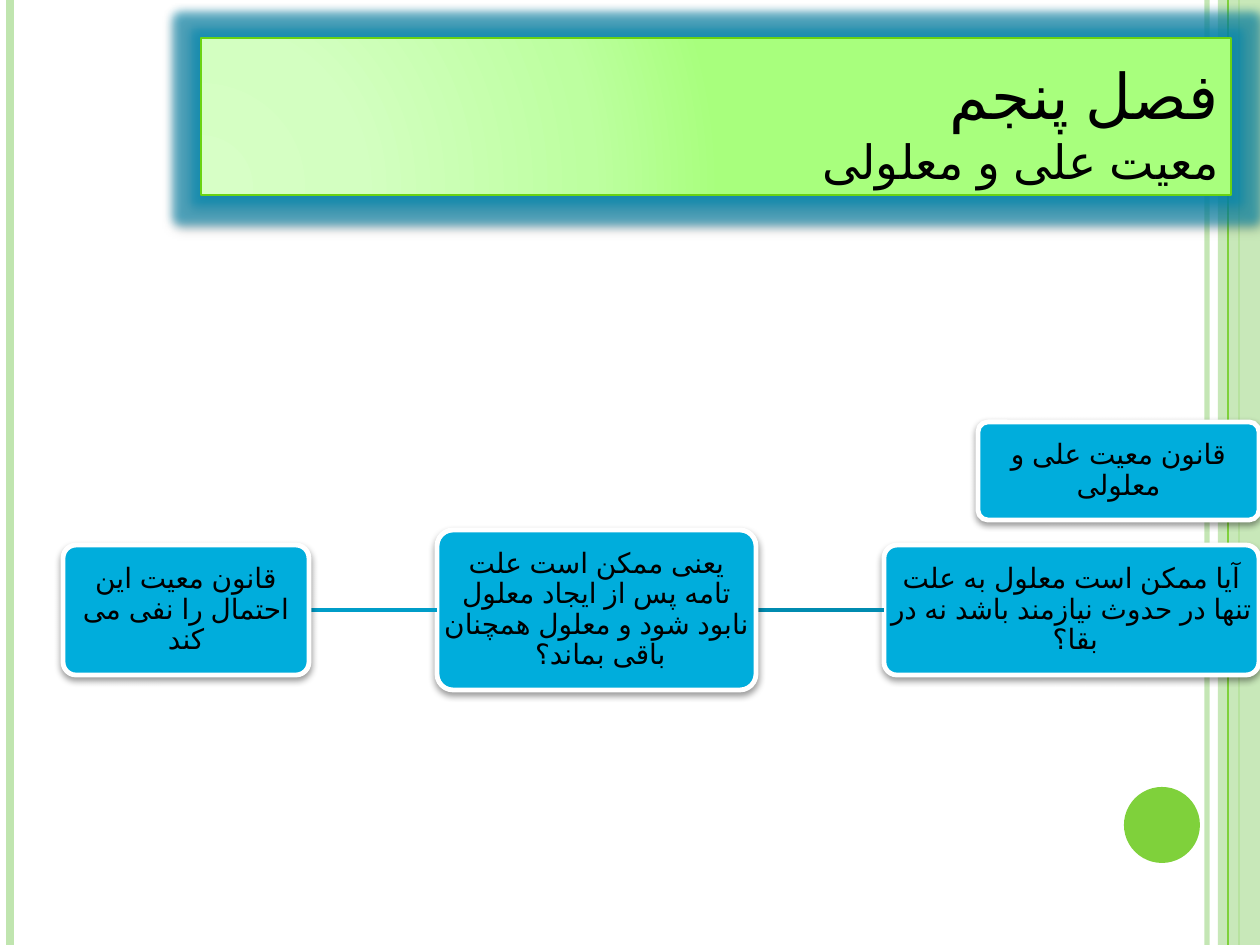
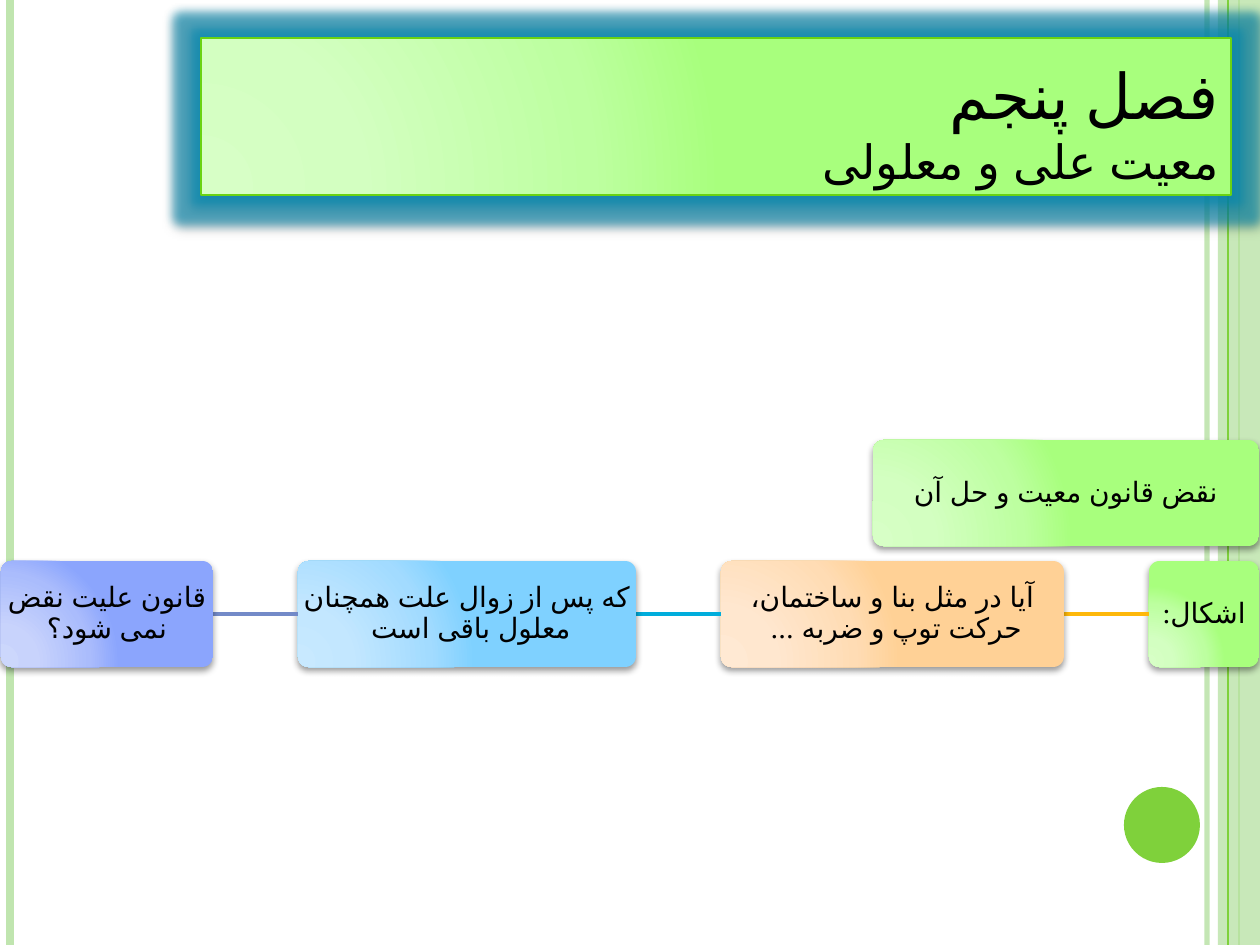
import pptx
import pptx.dml.color
import pptx.enum.shapes
import pptx.enum.text
import pptx.oxml
import pptx.oxml.ns
import pptx.util

RGBColor = pptx.dml.color.RGBColor
MSO_SHAPE = pptx.enum.shapes.MSO_SHAPE
PP_ALIGN = pptx.enum.text.PP_ALIGN
MSO_ANCHOR = pptx.enum.text.MSO_ANCHOR

# Scale and page
EMU_PER_PX = 914400 / 126
PAGE_WIDTH, PAGE_HEIGHT = 1260, 945
RIGHT_EDGE = 1259

# Colours
BLACK = RGBColor(0x00, 0x00, 0x00)
WHITE = RGBColor(0xFF, 0xFF, 0xFF)
PALE_GREEN = RGBColor(0xC0, 0xE5, 0xAF)
GREEN = RGBColor(0x7F, 0xD1, 0x3B)
TITLE_BORDER = RGBColor(0x6A, 0xD3, 0x12)
GLOW_BLUE = RGBColor(0x00, 0x88, 0xB0)
CYAN = RGBColor(0x00, 0xAD, 0xDC)
DARK_CYAN = RGBColor(0x00, 0x8B, 0xB0)
MID_CYAN = RGBColor(0x00, 0x9D, 0xC8)
AMBER = RGBColor(0xFE, 0xB8, 0x0A)
PERIWINKLE = RGBColor(0x73, 0x8A, 0xC8)

# Gradients, one colour per stop
GRADIENT_STOPS = (0, 30, 75, 100)
GREEN_GRADIENT = (RGBColor(0xD7, 0xFF, 0xC6), RGBColor(0xD3, 0xFF, 0xC1),
                  RGBColor(0xBD, 0xFF, 0xA0), RGBColor(0xA8, 0xFF, 0x7D))
ORANGE_GRADIENT = (RGBColor(0xFF, 0xE9, 0xD3), RGBColor(0xFF, 0xE7, 0xCF),
                   RGBColor(0xFF, 0xDC, 0xB4), RGBColor(0xFF, 0xD1, 0x96))
BLUE_GRADIENT = (RGBColor(0xC8, 0xE9, 0xFF), RGBColor(0xC3, 0xE7, 0xFF),
                 RGBColor(0xA2, 0xDB, 0xFF), RGBColor(0x7F, 0xD1, 0xFF))
VIOLET_GRADIENT = (RGBColor(0xCC, 0xD7, 0xFC), RGBColor(0xC8, 0xD3, 0xFC),
                   RGBColor(0xAA, 0xBC, 0xFC), RGBColor(0x8B, 0xA5, 0xFD))

# Text
FONT = "TeX Gyre Schola"
TITLE_LINES = (("فصل پنجم", 36), ("معیت علی و معلولی", 27))


def px(length):
    return pptx.util.Emu(round(length * EMU_PER_PX))


def set_values(target, values):
    for name, value in values.items():
        setattr(target, name, value)


def add_xml(parent, xml):
    """Append one DrawingML element to parent."""
    head, rest = xml.split(" ", 1)
    element = pptx.oxml.parse_xml(f"{head} {pptx.oxml.ns.nsdecls('a')} {rest}")
    parent.append(element)


def add_alpha(properties, percent):
    for colour in properties.iter(pptx.oxml.ns.qn("a:srgbClr")):
        add_xml(colour, f'<a:alpha val="{percent * 1000}"/>')


class Deck:
    """Holds the style and the current slide."""

    def __init__(self):
        self.presentation = pptx.Presentation()
        set_values(self.presentation, {"slide_width": px(PAGE_WIDTH),
                                       "slide_height": px(PAGE_HEIGHT)})
        self.slide = None

    def new_slide(self):
        self.slide = self.presentation.slides.add_slide(
            self.presentation.slide_layouts[6])
        self.frame()
        self.title()

    def line(self, start, end, colour, width, alpha=100):
        connector = self.slide.shapes.add_connector(
            pptx.enum.shapes.MSO_CONNECTOR.STRAIGHT,
            *(px(value) for value in (*start, *end)))
        connector.line.color.rgb = colour
        connector.line.width = pptx.util.Pt(width)
        properties = connector._element.spPr
        if alpha < 100:
            add_alpha(properties, alpha)
        add_xml(properties, "<a:effectLst />")

    def shape(self, kind, box, fill, border=None, border_width=1):
        shape = self.slide.shapes.add_shape(kind, *(px(value) for value in box))
        shape.shadow.inherit = False
        if isinstance(fill, RGBColor):
            shape.fill.solid()
            shape.fill.fore_color.rgb = fill
        else:
            self.gradient(shape, fill)
        if border is None:
            shape.line.fill.background()
        else:
            shape.line.color.rgb = border
            shape.line.width = pptx.util.Pt(border_width)
        return shape

    def gradient(self, shape, colours):
        shape.fill.gradient()
        fill = shape._element.spPr.find(pptx.oxml.ns.qn("a:gradFill"))
        for child in list(fill):
            fill.remove(child)
        stops = "".join(
            f'<a:gs pos="{stop * 1000}"><a:srgbClr val="{colour}"/></a:gs>'
            for stop, colour in zip(GRADIENT_STOPS, colours))
        add_xml(fill, f"<a:gsLst >{stops}</a:gsLst>")
        add_xml(fill, '<a:path path="circle"><a:fillToRect l="5000" t="100000" '
                      'r="120000" b="10000"/></a:path>')

    def effects(self, shape, glow=False):
        effect_list = shape._element.spPr.find(pptx.oxml.ns.qn("a:effectLst"))
        if glow:
            add_xml(effect_list,
                    f'<a:glow rad="{pptx.util.Pt(11)}"><a:srgbClr val="{GLOW_BLUE}">'
                    '<a:alpha val="60000"/></a:srgbClr></a:glow>')
        add_xml(effect_list,
                f'<a:outerShdw blurRad="{pptx.util.Pt(4)}" dist="{pptx.util.Pt(2)}" '
                f'dir="5400000" rotWithShape="0"><a:srgbClr val="{BLACK}">'
                '<a:alpha val="40000"/></a:srgbClr></a:outerShdw>')

    def text(self, shape, lines, frame_values, paragraph_values, small_caps=False):
        """Write right-to-left lines of (text, size) as one paragraph."""
        set_values(shape.text_frame, {"word_wrap": True, **frame_values})
        paragraph = shape.text_frame.paragraphs[0]
        set_values(paragraph, paragraph_values)
        paragraph._p.get_or_add_pPr().set("rtl", "1")
        for index, (words, size) in enumerate(lines):
            if index:
                paragraph.add_line_break()
            run = paragraph.add_run()
            run.text = words
            set_values(run.font, {"size": pptx.util.Pt(size), "name": FONT})
            run.font.color.rgb = BLACK
            properties = run._r.get_or_add_rPr()
            properties.set("lang", "fa-IR")
            if small_caps:
                properties.set("cap", "small")
            add_xml(properties, f'<a:cs typeface="{FONT}"/>')

    def frame(self):
        """Draw the side bands and the green disc."""
        def rule(x, colour, width, alpha=100):
            self.line((x, 0), (x, PAGE_HEIGHT), colour, width, alpha)

        rule(1207, PALE_GREEN, 3, 93)
        rule(10, PALE_GREEN, 4.5)
        rule(1239, GREEN, 1.5)
        band = self.shape(MSO_SHAPE.RECTANGLE, (1218, 0, 42, PAGE_HEIGHT), PALE_GREEN)
        add_alpha(band._element.spPr, 87)
        rule(1228, GREEN, 0.75)
        self.shape(MSO_SHAPE.OVAL, (1124, 787, 76, 76), GREEN)

    def title(self):
        banner = self.shape(MSO_SHAPE.RECTANGLE, (201, 38, 1030, 157),
                            GREEN_GRADIENT, TITLE_BORDER)
        self.effects(banner, glow=True)
        self.text(banner, TITLE_LINES, {"vertical_anchor": MSO_ANCHOR.BOTTOM},
                  {"alignment": PP_ALIGN.RIGHT}, small_caps=True)

    def card(self, box, words, fill, border=None):
        card = self.shape(MSO_SHAPE.ROUNDED_RECTANGLE, box, fill, border, 2.75)
        card.adjustments[0] = 0.1
        self.effects(card)
        margins = {f"margin_{side}": px(1) for side in ("left", "top", "right", "bottom")}
        self.text(card, [(words, 16)],
                  {"vertical_anchor": MSO_ANCHOR.MIDDLE, **margins},
                  {"alignment": PP_ALIGN.CENTER, "line_spacing": 0.9})

    def heading_card(self, top, width, height, words, fill, border=None):
        self.card((RIGHT_EDGE - width, top, width, height), words, fill, border)

    def chain(self, middle, gap, steps, link_colours, border=None):
        """Lay linked cards out from the right edge to the left."""
        right = RIGHT_EDGE
        for index, (width, height, words, fill) in enumerate(steps):
            if index:
                self.line((right, middle), (right - gap, middle),
                          link_colours[index - 1], 2)
                right -= gap
            right -= width
            self.card((right, middle - height // 2, width, height), words, fill, border)


def main():
    deck = Deck()

    # Slide 1: the law of simultaneity
    deck.new_slide()
    deck.heading_card(422, 281, 98, "قانون معیت علی و معلولی", CYAN, WHITE)
    deck.chain(610, 128, [
        (375, 130, "آیا ممکن است معلول به علت تنها در حدوث نیازمند باشد نه در بقا؟ ", CYAN),
        (319, 160, "یعنی ممکن است علت تامه پس از ایجاد معلول نابود شود "
                   "و معلول همچنان باقی بماند؟ ", CYAN),
        (246, 130, "قانون معیت این احتمال را نفی می کند", CYAN),
    ], [DARK_CYAN, MID_CYAN], WHITE)

    # Slide 2: the objection
    deck.new_slide()
    deck.heading_card(440, 386, 106, "نقض قانون معیت و حل آن", GREEN_GRADIENT)
    deck.chain(614, 85, [
        (110, 106, "اشکال:", GREEN_GRADIENT),
        (343, 106, "آیا در مثل بنا و ساختمان، حرکت توپ و ضربه ... ", ORANGE_GRADIENT),
        (338, 106, "که پس از زوال علت همچنان معلول باقی است ", BLUE_GRADIENT),
        (212, 106, "قانون علیت نقض نمی شود؟", VIOLET_GRADIENT),
    ], [AMBER, CYAN, PERIWINKLE])

    deck.presentation.save("out.pptx")


if __name__ == "__main__":
    main()
